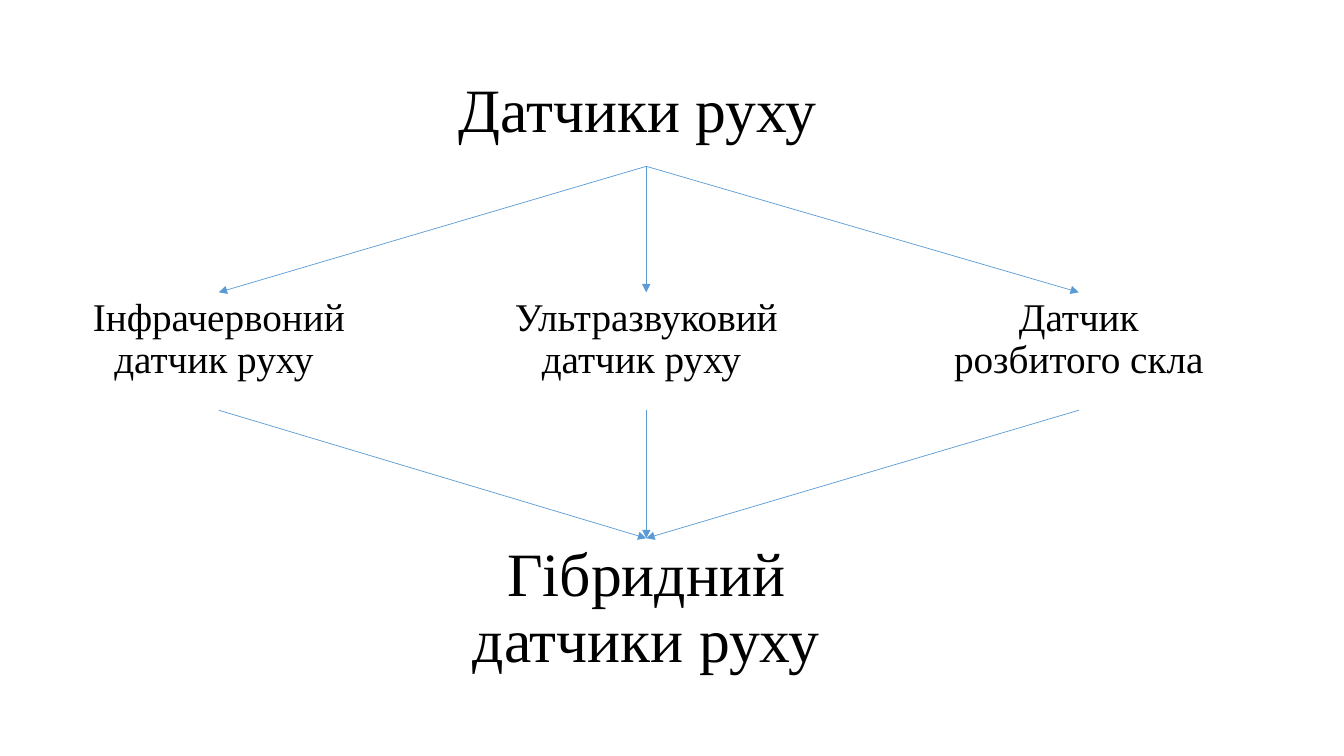
import pptx
import pptx.util
import pptx.dml.color
import pptx.enum.shapes
import pptx.enum.text
import pptx.oxml.ns
import lxml.etree

COLORS = {"text": "000000", "arrow": "5B9BD5", "page": "FFFFFF"}
FONT = "Times New Roman"
WIDTH, HEIGHT = 13.33, 7.5
CENTER = 6.41
TITLE_BOTTOM, ROW_TOP, ROW_BOTTOM, RESULT_TOP = 1.65, 2.9, 4.07, 5.34


def write_text(box, text, *, left, top, width, height, size=28,
               before=10, anchor=pptx.enum.text.MSO_ANCHOR.TOP):
    box.left, box.top, box.width, box.height = map(
        pptx.util.Inches, (left, top, width, height))
    frame = box.text_frame
    frame.word_wrap = True
    frame.auto_size = pptx.enum.text.MSO_AUTO_SIZE.NONE
    frame.vertical_anchor = anchor
    para = frame.paragraphs[0]
    para.alignment = pptx.enum.text.PP_ALIGN.CENTER
    para.line_spacing = 0.9
    para.space_before = pptx.util.Pt(before)
    properties = para._p.get_or_add_pPr()
    properties.set("marL", "0")
    properties.set("indent", "0")
    lxml.etree.SubElement(properties, pptx.oxml.ns.qn("a:buNone"))
    span = para.add_run()
    span.text = text
    span.font.name = FONT
    span.font.size = pptx.util.Pt(size)
    span.font.color.rgb = pptx.dml.color.RGBColor.from_string(COLORS["text"])


def add_arrow(page, start, end):
    arrow = page.shapes.add_connector(
        pptx.enum.shapes.MSO_CONNECTOR.STRAIGHT,
        *map(pptx.util.Inches, start + end))
    arrow.line.color.rgb = pptx.dml.color.RGBColor.from_string(COLORS["arrow"])
    arrow.line.width = pptx.util.Pt(0.5)
    tail = lxml.etree.SubElement(arrow.line._get_or_add_ln(), pptx.oxml.ns.qn("a:tailEnd"))
    tail.set("type", "triangle")
    lxml.etree.SubElement(arrow._element.spPr, pptx.oxml.ns.qn("a:effectLst"))


deck = pptx.Presentation()
deck.slide_width = pptx.util.Inches(WIDTH)
deck.slide_height = pptx.util.Inches(HEIGHT)
page = deck.slides.add_slide(deck.slide_layouts[1])
page.background.fill.solid()
page.background.fill.fore_color.rgb = pptx.dml.color.RGBColor.from_string(COLORS["page"])

write_text(page.shapes.title, "Датчики руху ", left=4.1, top=0.58, width=4.6,
           height=TITLE_BOTTOM - 0.58, size=44, before=0,
           anchor=pptx.enum.text.MSO_ANCHOR.MIDDLE)

sensors = [
    (page.placeholders[1], "Інфрачервоний датчик руху ", 2.17, 2.76),
    (page.shapes.add_textbox(0, 0, 0, 0), "Ультразвуковий датчик руху ", CENTER, 2.87),
    (page.shapes.add_textbox(0, 0, 0, 0), "Датчик розбитого скла", 10.7, 2.87),
]
for box, text, middle, width in sensors:
    write_text(box, text, left=middle - width / 2, top=ROW_TOP,
               width=width, height=ROW_BOTTOM - ROW_TOP)
    add_arrow(page, (CENTER, TITLE_BOTTOM), (middle, ROW_TOP))
    add_arrow(page, (middle, ROW_BOTTOM), (CENTER, RESULT_TOP))

write_text(page.shapes.add_textbox(0, 0, 0, 0), "Гібридний датчики руху",
           left=CENTER - 5.16 / 2, top=RESULT_TOP, width=5.16, height=1.65, size=44)

deck.save("out.pptx")
